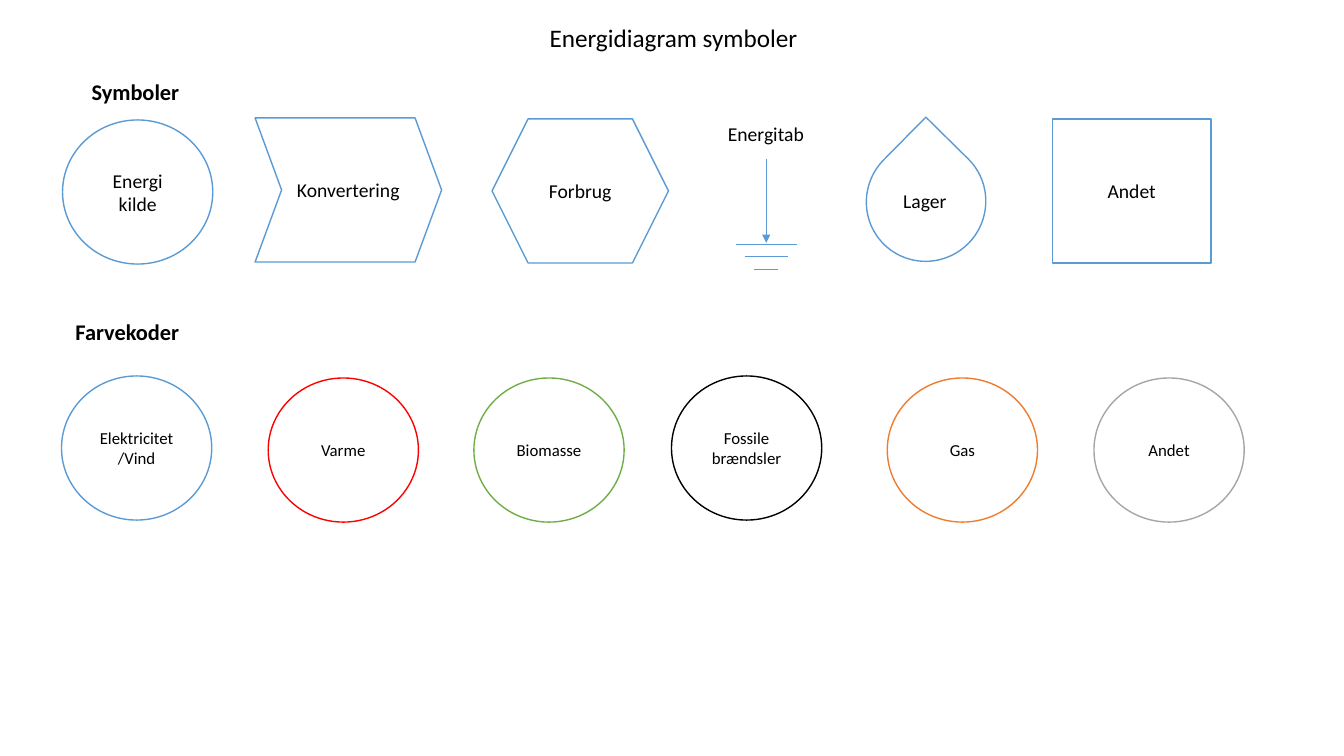
from lxml import etree
from pptx import Presentation
from pptx.dml.color import RGBColor
from pptx.enum import shapes, text
from pptx.oxml.ns import qn
from pptx.util import Inches, Pt

THEME = {
    "font": "Calibri",
    "white": "FFFFFF", "black": "000000", "blue": "5B9BD5", "red": "FF0000",
    "green": "70AD47", "orange": "ED7D31", "grey": "A6A6A6",
    "title": 18, "heading": 16, "symbol": 14, "code": 12,
    "outline": 1, "thin": 0.5,
}
KIND = shapes.MSO_SHAPE

TITLE = ("Energidiagram symboler", (5.35, 0.17, 2.69, 0.4))
# text, box, size, bold
LABELS = [
    ("Symboler", (0.81, 0.73, 1.08, 0.37), "heading", True),
    ("Farvekoder", (0.65, 3.11, 1.24, 0.37), "heading", True),
    ("Energitab", (7.12, 1.16, 0.97, 0.34), "symbol", False),
    ("Lager", (8.86, 1.83, 0.64, 0.34), "symbol", False),
]
# text, preset, box
SYMBOLS = [
    ("Energi\nkilde", KIND.OVAL, (0.62, 1.19, 1.49, 1.43)),
    ("Konvertering", KIND.CHEVRON, (2.53, 1.17, 1.85, 1.43)),
    ("Forbrug", KIND.HEXAGON, (4.88, 1.18, 1.75, 1.43)),
    ("", KIND.TEAR, (8.59, 1.41, 1.19, 1.18)),
    ("Andet", KIND.RECTANGLE, (10.44, 1.18, 1.57, 1.43)),
]
CHEVRON_POINT = 0.184
TEAR_ROTATION = 314.6
# text, colour, left, top
COLOUR_CODES = [
    ("Elektricitet\v/Vind", "blue", 0.61, 3.73),
    ("Varme", "red", 2.66, 3.75),
    ("Biomasse", "green", 4.7, 3.75),
    ("Fossile brændsler", "black", 6.66, 3.73),
    ("Gas", "orange", 8.8, 3.75),
    ("Andet", "grey", 10.85, 3.75),
]
CODE_SIZE = (1.49, 1.43)
LOSS_X, LOSS_TOP, LOSS_TIP = 7.6, 1.58, 2.41
GROUND_TOP, GROUND_STEP = 2.42, 0.125
GROUND_WIDTHS = [0.61, 0.43, 0.24]


def colour(name):
    return RGBColor.from_string(THEME[name])


def apply(target, values):
    for name, value in values.items():
        setattr(target, name, value)


def write(frame, content, size, align, bold=False, **frame_format):
    """Set the text; a newline starts a paragraph, a vertical tab breaks a line."""
    apply(frame, frame_format)
    frame.text = content
    for para in frame.paragraphs:
        para.alignment = align
        for span in para.runs:
            apply(span.font, {"name": THEME["font"], "size": Pt(THEME[size]), "bold": bold})
            span.font.color.rgb = colour("black")


def place(item, box):
    apply(item, dict(zip(("left", "top", "width", "height"), map(Inches, box))))


def add_outlined(page, kind, box, content, size, line_colour):
    shape = page.shapes.add_shape(kind, *map(Inches, box))
    shape.shadow.inherit = False
    shape.fill.solid()
    shape.fill.fore_color.rgb = colour("white")
    shape.line.color.rgb = colour(line_colour)
    shape.line.width = Pt(THEME["outline"])
    if content:
        write(shape.text_frame, content, size, text.PP_ALIGN.CENTER,
              word_wrap=True, vertical_anchor=text.MSO_ANCHOR.MIDDLE)
    return shape


def add_line(page, start, end, arrow=False):
    line = page.shapes.add_connector(
        shapes.MSO_CONNECTOR.STRAIGHT, *map(Inches, (*start, *end)))
    line.line.color.rgb = colour("blue")
    line.line.width = Pt(THEME["thin"])
    properties = line.line.color and line._element.spPr
    if arrow:
        etree.SubElement(properties.find(qn("a:ln")), qn("a:tailEnd"), type="triangle")
    etree.SubElement(properties, qn("a:effectLst"))


def add_title(page):
    content, box = TITLE
    title = page.shapes.title
    place(title, box)
    write(title.text_frame, content, "title", text.PP_ALIGN.LEFT, word_wrap=False,
          auto_size=text.MSO_AUTO_SIZE.SHAPE_TO_FIT_TEXT,
          vertical_anchor=text.MSO_ANCHOR.TOP)


def add_symbols(page):
    for content, kind, box in SYMBOLS:
        shape = add_outlined(page, kind, box, content, "symbol", "blue")
        if kind == KIND.CHEVRON:
            shape.adjustments[0] = CHEVRON_POINT
        elif kind == KIND.TEAR:
            shape.rotation = TEAR_ROTATION


def add_energy_loss(page):
    add_line(page, (LOSS_X, LOSS_TOP), (LOSS_X, LOSS_TIP), arrow=True)
    for row, width in enumerate(GROUND_WIDTHS):
        y = GROUND_TOP + row * GROUND_STEP
        add_line(page, (LOSS_X - width / 2, y), (LOSS_X + width / 2, y))


def add_colour_codes(page):
    for content, line_colour, left, top in COLOUR_CODES:
        add_outlined(page, KIND.OVAL, (left, top, *CODE_SIZE), content, "code", line_colour)


def add_labels(page):
    for content, box, size, bold in LABELS:
        label = page.shapes.add_textbox(*map(Inches, box))
        write(label.text_frame, content, size, text.PP_ALIGN.LEFT, bold, word_wrap=False,
              auto_size=text.MSO_AUTO_SIZE.SHAPE_TO_FIT_TEXT)


def main():
    deck = Presentation()
    apply(deck, {"slide_width": Inches(13.33), "slide_height": Inches(7.5)})
    page = deck.slides.add_slide(deck.slide_layouts[5])
    for add_part in (add_title, add_symbols, add_energy_loss, add_colour_codes, add_labels):
        add_part(page)
    deck.save("out.pptx")


if __name__ == "__main__":
    main()
